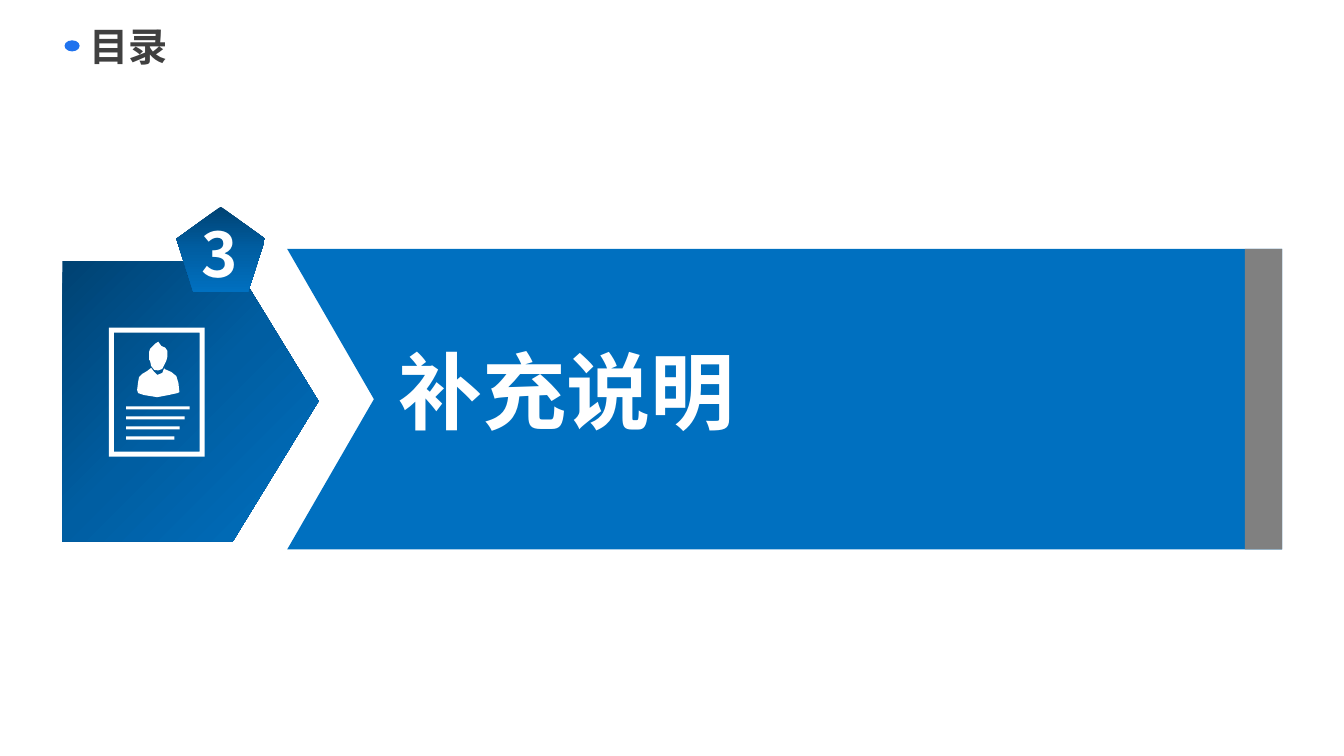
from copy import deepcopy

from lxml.etree import SubElement
from pptx import Presentation
from pptx.dml.color import RGBColor
from pptx.enum.shapes import MSO_SHAPE
from pptx.enum.text import MSO_ANCHOR, MSO_AUTO_SIZE, PP_ALIGN
from pptx.oxml.ns import qn
from pptx.util import Pt

FONT = "Noto Sans CJK SC"
WHITE = RGBColor(0xFF, 0xFF, 0xFF)
TITLE_GRAY = RGBColor(0x40, 0x40, 0x40)
BAR_GRAY = RGBColor(0x80, 0x80, 0x80)
DOT_BLUE = RGBColor(0x20, 0x73, 0xEE)
BLUE = RGBColor(0x00, 0x70, 0xC0)
MID_BLUE = RGBColor(0x00, 0x5E, 0xA2)
DARK_BLUE = RGBColor(0x00, 0x42, 0x72)

HEAD = [
    (29.5, 23.8), (30.2, 27.4), (32.4, 30.2), (35.3, 30.6), (38.2, 29.5),
    (41, 23.8), (41.8, 20.9), (41.8, 16.6), (40.3, 14.4), (37.4, 13),
    (35.3, 10.1), (33.1, 11.5), (29.5, 15.1), (28.8, 17.3), (28.8, 23),
]
SHOULDERS = [
    (20.9, 46.8), (25.2, 48.2), (34.6, 49.7), (42.5, 48.2), (49, 46.8),
    (50.4, 46.1), (49.7, 39.6), (48.2, 34.6), (44.6, 31.7), (39.6, 29.5),
    (39.6, 28.8), (38.2, 32.4), (34.6, 33.8), (32.4, 31.7), (30.2, 28.8),
    (27.4, 31), (23.8, 33.1), (21.6, 35.3), (20.9, 38.9), (20.2, 44.6),
]


def paint(shape, color):
    shape.shadow.inherit = False
    shape.line.fill.background()
    shape.fill.solid()
    shape.fill.fore_color.rgb = color


def paint_gradient(shape, angle):
    """Fill from dark to bright blue; the angle runs counter-clockwise."""
    shape.shadow.inherit = False
    shape.line.fill.background()
    shape.fill.gradient()
    shape.fill.gradient_angle = angle
    stop_list = shape.fill._fill._gradFill.find(qn("a:gsLst"))
    stop_list.insert(1, deepcopy(stop_list[0]))
    colors = (DARK_BLUE, MID_BLUE, BLUE)
    for stop, position, color in zip(shape.fill.gradient_stops, (0, 0.5, 1), colors):
        stop.color.rgb = color
        stop.position = position


def add_outline(page, left, top, *contours):
    """Draw closed contours, given in points relative to left and top."""
    placed = [[(Pt(left + x), Pt(top + y)) for x, y in contour] for contour in contours]
    builder = page.shapes.build_freeform(*placed[0][0])
    for index, (start, *rest) in enumerate(placed):
        if index:
            builder.move_to(*start)
        builder.add_line_segments(rest, close=True)
    return builder.convert_to_shape()


def rectangle(left, top, width, height):
    right, bottom = left + width, top + height
    return [(left, top), (right, top), (right, bottom), (left, bottom)]


def write(text_frame, text, size, color):
    text_frame.text = text
    span = text_frame.paragraphs[0].runs[0]
    span.font.size = Pt(size)
    span.font.bold = True
    span.font.color.rgb = color
    span.font.name = FONT
    SubElement(span._r.get_or_add_rPr(), qn("a:ea")).set("typeface", FONT)


def add_label(page, text, size, left, top, width, height, inset=None):
    box = page.shapes.add_textbox(Pt(left), Pt(top), Pt(width), Pt(height))
    frame = box.text_frame
    frame.word_wrap = False
    frame.auto_size = MSO_AUTO_SIZE.SHAPE_TO_FIT_TEXT
    if inset is not None:
        frame.margin_left = frame.margin_right = Pt(inset)
        frame.margin_top = frame.margin_bottom = Pt(inset)
    write(frame, text, size, WHITE)


def add_heading(page, left, top, width, height):
    dot = page.shapes.add_shape(
        MSO_SHAPE.OVAL, Pt(left - 10.8), Pt(top + 20.16), Pt(10.8), Pt(7.92))
    paint(dot, DOT_BLUE)
    title = page.shapes.title
    title.left, title.top, title.width, title.height = map(Pt, (left, top, width, height))
    title.text_frame.vertical_anchor = MSO_ANCHOR.MIDDLE
    write(title.text_frame, "目录", 28, TITLE_GRAY)
    title.text_frame.paragraphs[0].alignment = PP_ALIGN.LEFT


def add_banner(page, left, top, width, height):
    notch, bar_width = 61.92, 26.64
    band = add_outline(page, left, top, [
        (width, 0), (0, 0), (notch, height / 2), (0, height), (width, height)])
    paint(band, BLUE)
    add_label(page, "补充说明", 60, left + 79.2, top + 64.8, 240, 72.72, inset=0)
    bar = page.shapes.add_shape(
        MSO_SHAPE.RECTANGLE, Pt(left + width - bar_width), Pt(top), Pt(bar_width), Pt(height))
    paint(bar, BAR_GRAY)


def add_profile_icon(page, left, top, width, height):
    border = 3.6
    frame = rectangle(0, 0, width, height)
    opening = rectangle(border, border, width - 2 * border, height - 2 * border)
    text_lines = [rectangle(12.3, 56.2 + 7.2 * row, 45.4 - 3.6 * row, 2.16) for row in range(4)]
    icon = add_outline(page, left, top, frame, opening[::-1], HEAD, SHOULDERS, *text_lines)
    paint(icon, WHITE)


def add_arrow(page, left, top, width, height):
    shoulder = width - 61.2
    arrow = add_outline(page, left, top, [
        (0, height), (0, 0), (shoulder, 0), (width, height / 2), (shoulder, height)])
    paint_gradient(arrow, 315)
    add_profile_icon(page, left + 33.12, top + 47.52, 68.4, 92.16)


def add_number_badge(page, left, top, width, height):
    side, foot = 23.04, 12.24
    badge = add_outline(page, left, top, [
        (foot, height), (0, side), (width / 2, 0), (width, side), (width - foot, height)])
    paint_gradient(badge, 270)
    add_label(page, "3", 44, left + 10.8, top + 2.88, 41.76, 60.48)


def main():
    deck = Presentation()
    deck.slide_width, deck.slide_height = Pt(960), Pt(540)
    page = deck.slides.add_slide(deck.slide_layouts[5])
    add_heading(page, 56.88, 8.64, 853.92, 48.24)
    add_banner(page, 205.2, 177.84, 710.64, 214.56)
    add_arrow(page, 44.64, 186.48, 182.88, 200.16)
    add_number_badge(page, 126, 147.6, 63.36, 61.2)
    deck.save("out.pptx")


if __name__ == "__main__":
    main()
